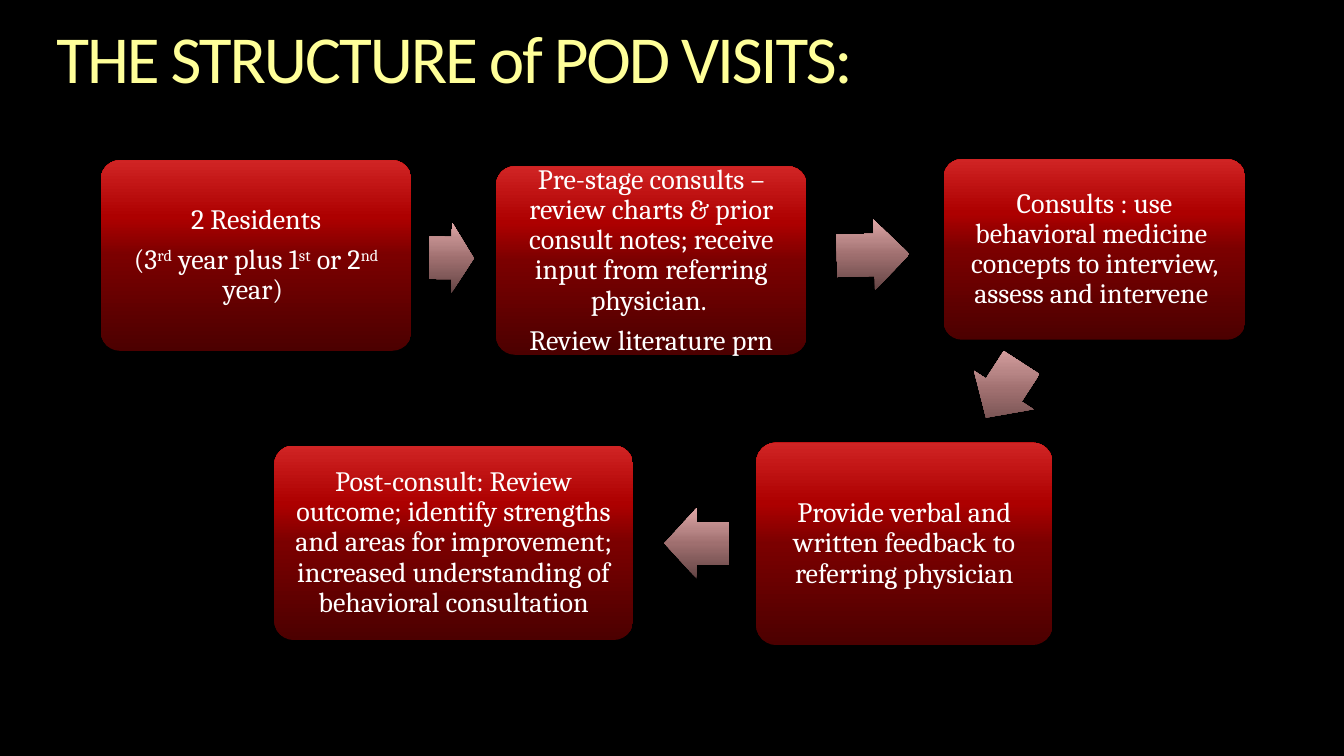
from lxml.etree import SubElement
from pptx import Presentation
from pptx.dml.color import RGBColor
from pptx.enum.shapes import MSO_SHAPE
from pptx.enum.text import MSO_ANCHOR, PP_ALIGN
from pptx.oxml.ns import qn
from pptx.util import Inches, Pt

COLORS = {"background": "000000", "title": "FFFF99", "text": "FFFFFF"}
# Gradient stops from bottom to top: position in percent, colour
STEP_GRADIENT = [(0, "4C0000"), (50, "7B0000"), (70, "AD0000"), (100, "D02424")]
ARROW_GRADIENT = [(0, "634444"), (50, "9F6F6F"), (70, "B88686"), (100, "DFA6A6")]

# Left, top, width, height and paragraphs; ^ encloses superscript
STEPS = [
    (1, 1.59, 3.08, 1.89,
     ["2 Residents", "(3^rd^ year plus 1^st^ or 2^nd^ year) "]),
    (4.92, 1.65, 3.08, 1.87,
     ["Pre-stage consults – review charts & prior consult notes; "
      "receive input from referring physician. ",
      "Review literature prn"]),
    (9.36, 1.58, 2.99, 1.79,
     ["Consults : use behavioral medicine  concepts to interview, "
      "assess and intervene "]),
    (7.5, 4.39, 2.94, 2.01,
     ["Provide verbal and written feedback to referring physician"]),
    (2.72, 4.42, 3.56, 1.93,
     ["Post-consult: Review outcome; identify strengths and areas for "
      "improvement; increased understanding of behavioral consultation"]),
]
# Left, top, width, rotation
ARROWS = [
    (4.26, 2.21, 0.44, 0.7),
    (8.3, 2.18, 0.72, 358.6),
    (9.63, 3.52, 0.65, 122.9),
    (6.59, 5.04, 0.64, 180.1),
]
ARROW_HEIGHT = 0.7


class FlowSlide:
    def __init__(self, presentation):
        self.slide = presentation.slides.add_slide(presentation.slide_layouts[6])
        fill = self.slide.background.fill
        fill.solid()
        fill.fore_color.rgb = RGBColor.from_string(COLORS["background"])

    def set_insets(self, frame, inset):
        frame.word_wrap = True
        frame.margin_left = frame.margin_right = Inches(inset)
        frame.margin_top = frame.margin_bottom = Inches(inset)

    def set_font(self, run, name, size, color):
        run.font.name = name
        run.font.size = Pt(size)
        run.font.color.rgb = RGBColor.from_string(COLORS[color])

    def add_title(self, text):
        shape = self.slide.shapes.add_textbox(
            Inches(0.56), Inches(0.25), Inches(12.22), Inches(0.73))
        frame = shape.text_frame
        self.set_insets(frame, 0)
        frame.text = text
        paragraph = frame.paragraphs[0]
        paragraph.line_spacing = 0.9
        run = paragraph.runs[0]
        self.set_font(run, "Calibri", 48, "title")
        run.font._element.set("spc", "-150")

    def add_gradient_shape(self, kind, box, adjustments, stops):
        shape = self.slide.shapes.add_shape(kind, *map(Inches, box))
        for index, value in enumerate(adjustments):
            shape.adjustments[index] = value
        shape.shadow.inherit = False
        shape.line.fill.background()
        # Vertical gradient that stays upright when the shape turns
        shape.fill.gradient()
        gradient = shape._element.spPr.find(qn("a:gradFill"))
        gradient.set("rotWithShape", "0")
        stop_list = gradient.find(qn("a:gsLst"))
        for old_stop in list(stop_list):
            stop_list.remove(old_stop)
        for position, color in stops:
            stop = SubElement(stop_list, qn("a:gs"), pos=str(position * 1000))
            SubElement(stop, qn("a:srgbClr"), val=color)
        gradient.find(qn("a:lin")).set("ang", str(270 * 60000))
        return shape

    def add_step(self, left, top, width, height, texts):
        shape = self.add_gradient_shape(
            MSO_SHAPE.ROUNDED_RECTANGLE, (left, top, width, height),
            [0.1], STEP_GRADIENT)
        frame = shape.text_frame
        self.set_insets(frame, 0.08)
        frame.vertical_anchor = MSO_ANCHOR.MIDDLE
        for index, text in enumerate(texts):
            paragraph = frame.add_paragraph() if index else frame.paragraphs[0]
            paragraph.alignment = PP_ALIGN.CENTER
            paragraph.line_spacing = 0.9
            paragraph.space_after = Pt(7)
            for part, words in enumerate(text.split("^")):
                run = paragraph.add_run()
                run.text = words
                self.set_font(run, "Cambria", 20, "text")
                if part % 2:
                    run.font._element.set("baseline", "30000")

    def add_arrow(self, left, top, width, rotation):
        shape = self.add_gradient_shape(
            MSO_SHAPE.RIGHT_ARROW, (left, top, width, ARROW_HEIGHT),
            [0.6, 0.5], ARROW_GRADIENT)
        shape.rotation = rotation


def main():
    presentation = Presentation()
    presentation.slide_width = Inches(13.33)
    presentation.slide_height = Inches(7.5)
    flow = FlowSlide(presentation)

    # Title
    flow.add_title("THE STRUCTURE of POD VISITS:")

    # Steps and the arrows between them
    for step in STEPS:
        flow.add_step(*step)
    for arrow in ARROWS:
        flow.add_arrow(*arrow)

    presentation.save("out.pptx")


if __name__ == "__main__":
    main()
